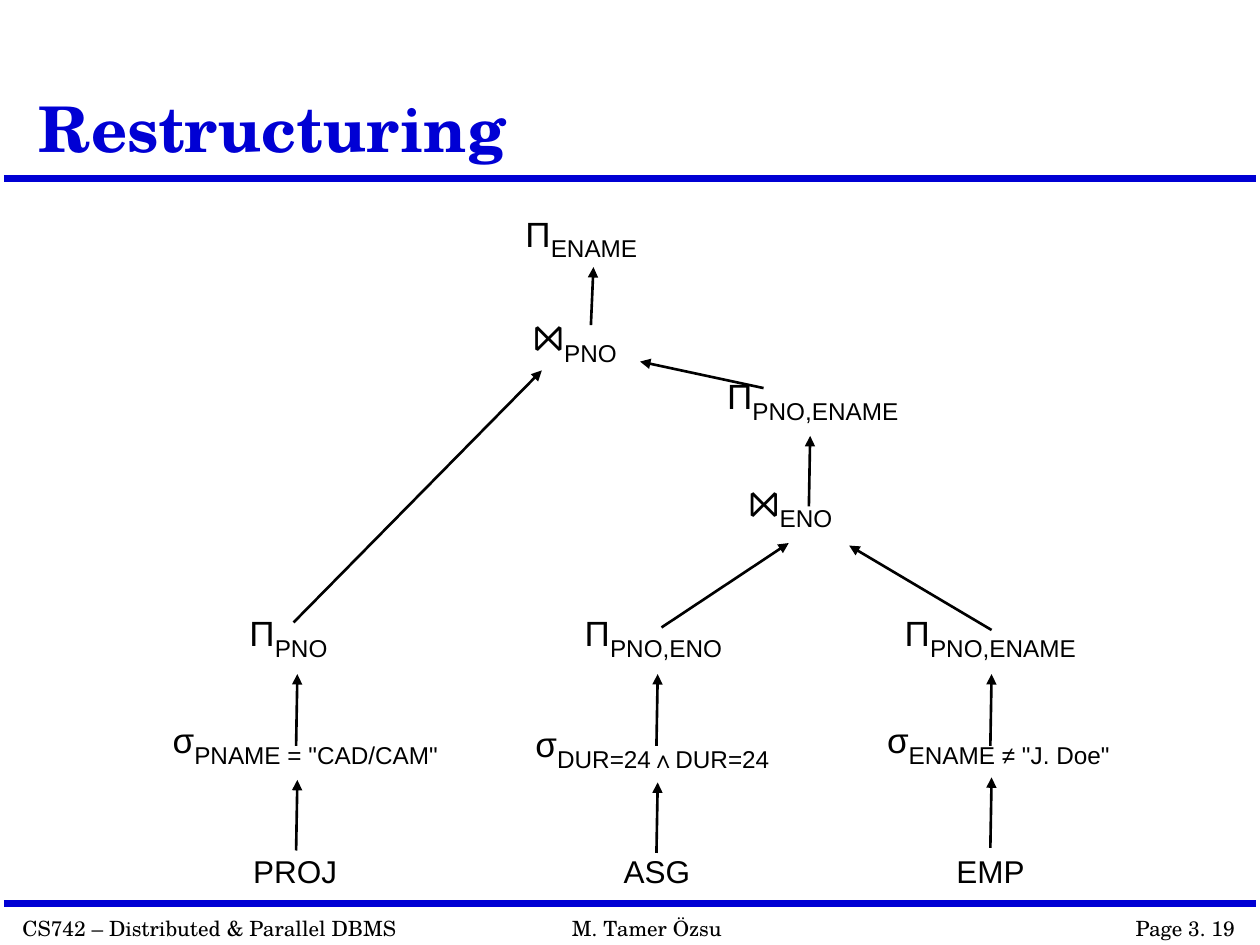
import pptx
import pptx.dml.color
import pptx.enum.shapes
import pptx.enum.text
import pptx.oxml.ns
import pptx.util
from lxml import etree

EMU_PER_PX = 9144
BLUE = pptx.dml.color.RGBColor(0x00, 0x00, 0xD4)
BLACK = pptx.dml.color.RGBColor(0x00, 0x00, 0x00)
SERIF, SANS, MATH = "TeX Gyre Schola", "Arial", "Cambria"
ALIGN = pptx.enum.text.PP_ALIGN
ANCHOR = pptx.enum.text.MSO_ANCHOR
AUTO = pptx.enum.text.MSO_AUTO_SIZE
qn = pptx.oxml.ns.qn


def px(n):
    return pptx.util.Emu(n * EMU_PER_PX)


def add_run(p, text, font=SANS, size=18, color=BLACK, bold=False, baseline=None):
    r = p.add_run()
    r.text = text
    r.font.name = font
    r.font.size = pptx.util.Pt(size)
    r.font.bold = bold
    r.font.color.rgb = color
    if baseline is not None:
        r.font._element.set("baseline", str(baseline))
    return r


class SlideBuilder:
    def __init__(self, slide):
        self.s = slide

    def box(self, x, y, w, h, margins=(0, 0), wrap=False, grow=True,
            anchor=ANCHOR.TOP, align=ALIGN.LEFT, spacing=None):
        sp = self.s.shapes.add_textbox(px(x), px(y), px(w), px(h))
        tf = sp.text_frame
        tf.margin_left = tf.margin_right = px(margins[0])
        tf.margin_top = tf.margin_bottom = px(margins[1])
        tf.word_wrap = wrap
        tf.auto_size = AUTO.SHAPE_TO_FIT_TEXT if grow else AUTO.NONE
        tf.vertical_anchor = anchor
        p = tf.paragraphs[0]
        p.alignment = align
        p.line_spacing = spacing
        return p

    def title(self, text):
        p = self.box(21, 12, 783, 125, (10, 5), wrap=True, grow=False,
                     anchor=ANCHOR.BOTTOM, spacing=0.9)
        add_run(p, text, font=SERIF, size=36, color=BLUE, bold=True)

    def footer(self, text, x, w, align=ALIGN.LEFT):
        p = self.box(x, 722, w, 30, (10, 5), align=align)
        add_run(p, text, font=SERIF, size=12)

    def relation(self, name, x, w):
        p = self.box(x, 676, w, 31, spacing=pptx.util.Pt(22))
        add_run(p, name)

    def operator(self, symbol, subscript, x, y, w, wrap=True):
        is_join = symbol == "⋈"
        p = self.box(x, y, w, 34 if is_join else 31, wrap=wrap,
                     spacing=pptx.util.Pt(22))
        add_run(p, symbol, font=MATH if is_join else SANS,
                size=28 if is_join else 20)
        add_run(p, subscript, size=24, baseline=-25000)

    def line(self, x1, y1, x2, y2, color=BLACK, width=1.5):
        c = self.s.shapes.add_connector(
            pptx.enum.shapes.MSO_CONNECTOR.STRAIGHT, px(x1), px(y1), px(x2), px(y2))
        c.line.color.rgb = color
        c.line.width = pptx.util.Pt(width)
        etree.SubElement(c._element.spPr, qn("a:effectLst"))
        return c

    def arrow(self, x1, y1, x2, y2):
        c = self.line(x1, y1, x2, y2)
        etree.SubElement(c.line._get_or_add_ln(), qn("a:tailEnd"), type="triangle")


def main():
    prs = pptx.Presentation()
    prs.slide_width, prs.slide_height = px(1000), px(750)
    b = SlideBuilder(prs.slides.add_slide(prs.slide_layouts[6]))

    for y in (142, 717):
        b.line(3, y, 997, y, BLUE, 4)
    b.footer("CS742 – Distributed & Parallel DBMS", 8, 320)
    b.footer("M. Tamer Özsu", 444, 139)
    b.footer("Page 3. 19", 890, 100, ALIGN.RIGHT)
    b.title("Restructuring")

    for name, x, w in (("PROJ", 201, 68), ("ASG", 495, 55), ("EMP", 759, 55)):
        b.relation(name, x, w)

    operators = (
        ("Π", "ENAME", 417, 178, 125, True),
        ("⋈", "PNO", 423, 261, 68, False),
        ("Π", "PNO,ENAME", 577, 307, 175, True),
        ("⋈", "ENO", 594, 392, 95, True),
        ("Π", "PNO", 198, 495, 76, True),
        ("Π", "PNO,ENO", 464, 495, 138, True),
        ("Π", "PNO,ENAME", 718, 495, 191, True),
        ("σ", 'PNAME = "CAD/CAM"', 137, 580, 242, False),
        ("σ", "DUR=24∧DUR=24", 425, 583, 267, True),
        ("σ", 'ENAME ≠ "J. Doe"', 704, 580, 202, False),
    )
    for operator in operators:
        b.operator(*operator)

    for x, y in ((235, 675), (521, 677), (786, 673)):
        b.arrow(x, y, x + 1, y - 56)
        b.arrow(x, 592, x + 1, 535)

    for ends in ((233, 494, 430, 294), (525, 498, 626, 431), (787, 500, 674, 433),
                 (642, 402, 643, 346), (606, 308, 508, 287), (469, 258, 471, 212)):
        b.arrow(*ends)

    prs.save("out.pptx")


if __name__ == "__main__":
    main()
